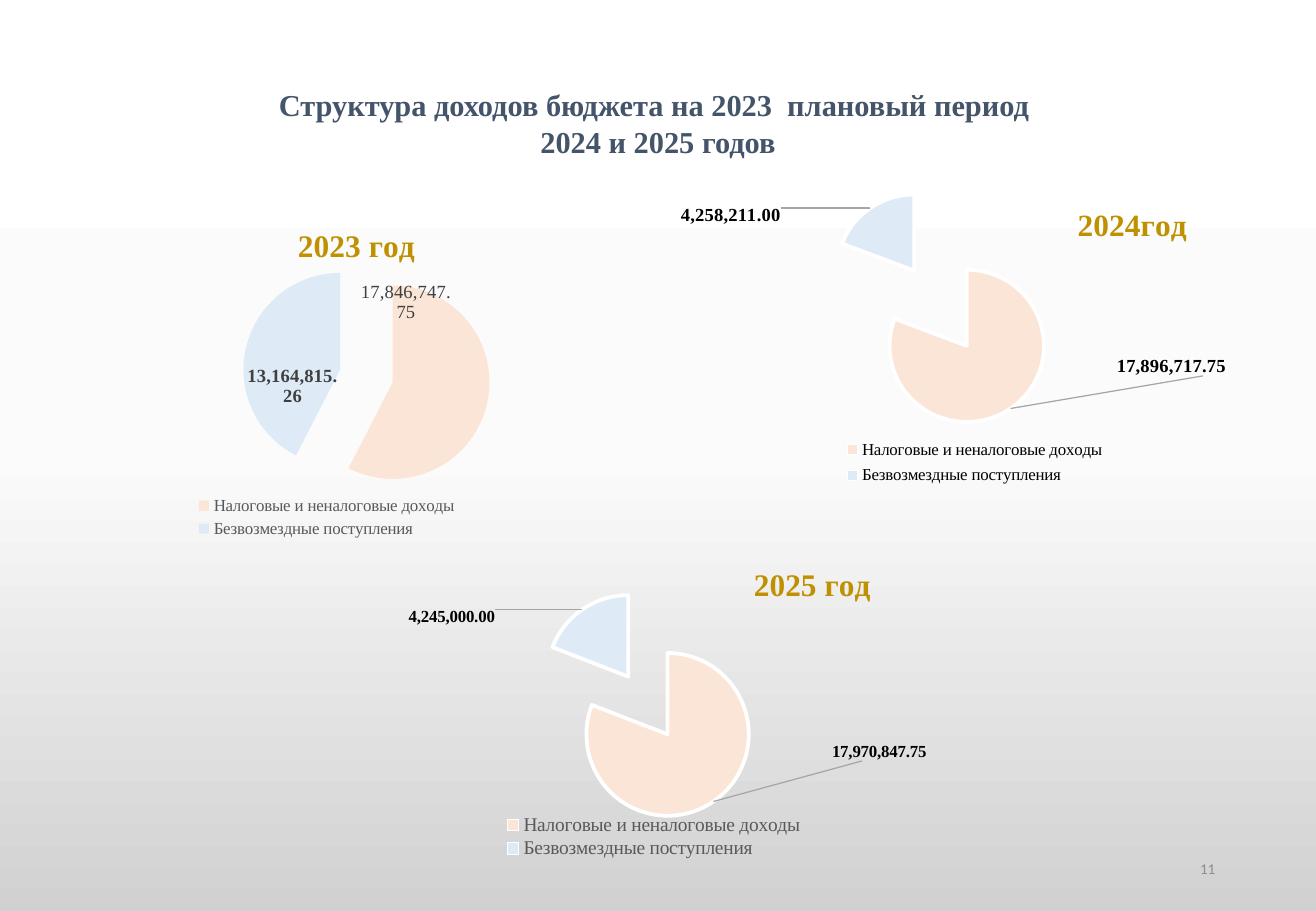
from copy import deepcopy
from dataclasses import dataclass

from lxml.etree import SubElement
from pptx import Presentation
from pptx.chart.data import CategoryChartData
from pptx.dml.color import RGBColor
from pptx.enum.chart import XL_CHART_TYPE, XL_LABEL_POSITION, XL_LEGEND_POSITION
from pptx.enum.shapes import MSO_SHAPE
from pptx.enum.text import MSO_ANCHOR, PP_ALIGN
from pptx.oxml import parse_xml
from pptx.oxml.ns import nsdecls, qn
from pptx.util import Inches, Pt

SERIF = "Times New Roman"
NUMBER_FORMAT = "#,##0.00"
CATEGORIES = ["Налоговые и неналоговые доходы", "Безвозмездные поступления"]
SLICE_COLORS = ["FBE5D6", "DEEBF7"]


@dataclass
class Label:
    """Value label of a slice; shift is a share of the chart's size."""
    shift: tuple
    size: float = 11
    color: str = "000000"
    bold: bool = True


@dataclass
class YearPie:
    """Boxes hold left, top, width and height as shares of the chart."""
    title: str
    values: list
    frame: tuple
    title_corner: tuple
    plot_box: tuple
    legend_box: tuple
    legend_side: XL_LEGEND_POSITION
    legend_size: float
    legend_color: str
    explosion: int
    outline: float
    label_position: XL_LABEL_POSITION
    labels: list


INSIDE, BEST = XL_LABEL_POSITION.INSIDE_END, XL_LABEL_POSITION.BEST_FIT
BOTTOM, RIGHT = XL_LEGEND_POSITION.BOTTOM, XL_LEGEND_POSITION.RIGHT
YEARS = [
    YearPie("2023 год", [17846747.75, 13164815.26], (0.52, 1.64, 4.71, 2.91),
            (0.4, 0.06), (0.06, 0.15, 0.94, 0.7), (0.22, 0.83, 0.48, 0.14),
            BOTTOM, 10, "595959", 28, 0, INSIDE,
            [Label((-0.05, -0.23), color="404040", bold=False),
             Label((-0.01, 0.05), color="404040")]),
    YearPie("2024год", [17896717.75, 4258211], (5.39, 1.5, 4.7, 2.71),
            (0.73, 0.04), (0, 0, 1, 0.75), (0.31, 0.76, 0.5, 0.18),
            RIGHT, 10, "000000", 60, 2.25, BEST,
            [Label((0.33, -0.18)), Label((-0.15, 0.07))]),
    YearPie("2025 год", [17970847.75, 4245000], (3.04, 4.5, 4.6, 2.7),
            (0.68, 0.04), (0, 0.13, 1, 0.71), (0.23, 0.81, 0.56, 0.15),
            BOTTOM, 11.5, "595959", 43, 2.25, BEST,
            [Label((0.26, -0.2), size=10), Label((-0.15, 0.07), size=10)]),
]


def rgb(color):
    return RGBColor.from_string(color)


def style_font(font, size, color, bold=False, name=SERIF):
    font.name, font.size, font.bold = name, Pt(size), bold
    font.color.rgb = rgb(color)


def manual_layout(values, inner=False, edge=True):
    """Build a c:layout from x, y and optional width and height shares."""
    layout = parse_xml(f"<c:layout {nsdecls('c')}><c:manualLayout/></c:layout>")
    settings = [("layoutTarget", "inner")] if inner else []
    if edge:
        settings += [("xMode", "edge"), ("yMode", "edge")]
    settings += zip("xywh", values)
    for tag, value in settings:
        SubElement(layout[0], qn(f"c:{tag}")).set("val", str(value))
    return layout


def place_part(part, values, after=None, inner=False):
    """Give a chart part its layout, behind the child named by after."""
    for old in part.findall(qn("c:layout")):
        part.remove(old)
    layout = manual_layout(values, inner)
    if after:
        part.find(qn(after)).addnext(layout)
    else:
        part.insert(0, layout)


def add_slice_label(point, label, position):
    data_label = point.data_label
    style_font(data_label.font, label.size, label.color, label.bold)
    data_label.position = position


def add_year_pie(slide, year):
    data = CategoryChartData(number_format=NUMBER_FORMAT)
    data.categories = CATEGORIES
    data.add_series("Series 1", year.values)
    frame = [Inches(length) for length in year.frame]
    chart = slide.shapes.add_chart(XL_CHART_TYPE.PIE, *frame, data).chart
    style_font(chart.font, 10, "000000", name="Calibri")

    chart.has_title = True
    title = chart.chart_title.text_frame
    title.text = year.title
    style_font(title.paragraphs[0].runs[0].font, 18.6, "BF9000", True)
    chart.has_legend = True
    chart.legend.position = year.legend_side
    chart.legend.include_in_layout = False
    style_font(chart.legend.font, year.legend_size, year.legend_color)

    plot = chart.plots[0]
    plot.vary_by_categories = True
    series = plot.series[0]
    labels = series.data_labels
    labels.show_value = True
    labels.number_format, labels.number_format_is_linked = NUMBER_FORMAT, False
    labels.position = year.label_position
    style_font(labels.font, year.labels[0].size, year.labels[0].color, True)
    for index, (color, label) in enumerate(zip(SLICE_COLORS, year.labels)):
        point = series.points[index]
        point.format.fill.solid()
        point.format.fill.fore_color.rgb = rgb(color)
        if year.outline:
            point.format.line.color.rgb = rgb("FFFFFF")
            point.format.line.width = Pt(year.outline)
        else:
            point.format.line.fill.background()
        add_slice_label(point, label, year.label_position)
    arrange_chart(chart.element, year)


def arrange_chart(root, year):
    """Set the layouts, explosion and leader lines of a pie."""
    place_part(root.xpath(".//c:plotArea")[0], year.plot_box, inner=True)
    place_part(root.xpath(".//c:chart/c:title")[0], year.title_corner, "c:tx")
    place_part(root.xpath(".//c:legend")[0], year.legend_box, "c:legendPos")

    explosion = parse_xml(f'<c:explosion {nsdecls("c")} val="{year.explosion}"/>')
    root.xpath(".//c:ser/c:dPt")[0].addprevious(explosion)
    for element, label in zip(root.xpath(".//c:dLbl"), year.labels):
        number_format = parse_xml(
            f'<c:numFmt {nsdecls("c")} formatCode="{NUMBER_FORMAT}" sourceLinked="0"/>')
        index = element.find(qn("c:idx"))
        index.addnext(number_format)
        index.addnext(manual_layout(label.shift, edge=False))

    labels = root.xpath(".//c:ser/c:dLbls")[0]
    for old in labels.findall(qn("c:showLeaderLines")):
        labels.remove(old)
    SubElement(labels, qn("c:showLeaderLines")).set("val", "1")
    labels.append(parse_xml(
        f'<c:leaderLines {nsdecls("c", "a")}><c:spPr><a:ln w="9525"><a:solidFill>'
        '<a:srgbClr val="A6A6A6"/></a:solidFill></a:ln></c:spPr></c:leaderLines>'))


def fill_background(slide):
    fill = slide.background.fill
    fill.gradient()
    fill.gradient_angle = 270
    stops = slide.element.find(f".//{qn('a:gsLst')}")
    stops.insert(1, deepcopy(stops[0]))
    shades = [(0, "FFFFFF"), (0.5, "FBFBFB"), (1, "D1D1D1")]
    for stop, (position, color) in zip(fill.gradient_stops, shades):
        stop.position = position
        stop.color.rgb = rgb(color)


def write_lines(shape, lines, alignment, **font):
    text_frame = shape.text_frame
    text_frame.word_wrap = True
    text_frame.vertical_anchor = MSO_ANCHOR.MIDDLE
    text_frame.text = "\n".join(lines)
    for paragraph in text_frame.paragraphs:
        paragraph.alignment = alignment
        style_font(paragraph.runs[0].font, **font)


def add_heading(slide):
    heading = slide.shapes.add_shape(
        MSO_SHAPE.RECTANGLE, Inches(0.64), Inches(0.6), Inches(9.55), Inches(0.82))
    heading.shadow.inherit = False
    heading.fill.background()
    heading.line.color.rgb = rgb("FFFFFF")
    heading.line.width = Pt(1)
    lines = ["Структура доходов бюджета на 2023  плановый период ", "2024 и 2025 годов"]
    write_lines(heading, lines, PP_ALIGN.CENTER, size=18, color="44546A", bold=True)


def add_page_number(slide):
    box = slide.shapes.add_textbox(Inches(7.66), Inches(6.95), Inches(2.44), Inches(0.4))
    write_lines(box, ["11"], PP_ALIGN.RIGHT, size=8.9, color="8C8C8C", name="Calibri")


def main():
    presentation = Presentation()
    presentation.slide_width, presentation.slide_height = Inches(10.83), Inches(7.5)
    slide = presentation.slides.add_slide(presentation.slide_layouts[6])
    fill_background(slide)
    for year in YEARS:
        add_year_pie(slide, year)
    add_heading(slide)
    add_page_number(slide)
    presentation.save("out.pptx")


if __name__ == "__main__":
    main()
